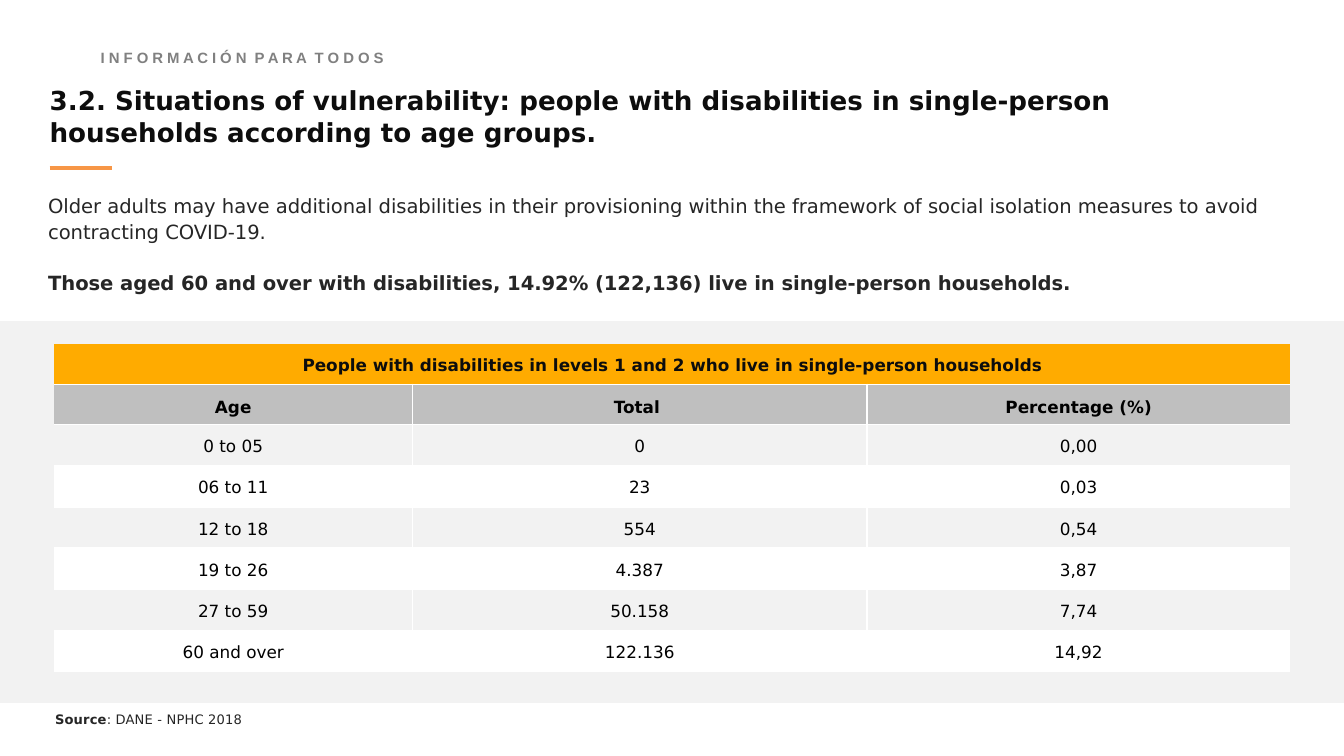
import pptx
import pptx.dml.color
import pptx.enum.shapes
import pptx.enum.text
import pptx.oxml.ns
import pptx.util
import lxml.etree
from pptx.util import Inches

THEME = {
    "font": {"body": "DejaVu Sans", "tagline": "Arial"},
    "size": {"title": 14, "body": 10.5, "table": 9, "tagline": 8, "source": 7},
    "color": {
        "title": "0D0D0D", "body": "262626", "tagline": "808080", "black": "000000",
        "white": "FFFFFF", "band": "F2F2F2", "table_title": "FFAB00",
        "table_head": "BFBFBF", "accent": "F79646",
    },
}
ALIGN = pptx.enum.text.PP_ALIGN
qn = pptx.oxml.ns.qn


def color(name):
    return pptx.dml.color.RGBColor.from_string(THEME["color"][name])


def add_text(paragraph, text, size, color_name, bold=False, face="body", spacing=0,
             indent=0, **layout):
    """Add a run to a paragraph; layout holds paragraph attributes."""
    for name, value in layout.items():
        setattr(paragraph, name, value)
    if indent:
        paragraph._p.get_or_add_pPr().set("marL", str(Inches(indent)))
    run = paragraph.add_run()
    run.text = text
    font_format = {
        "name": THEME["font"][face],
        "size": pptx.util.Pt(THEME["size"][size]),
        "bold": bold,
    }
    for name, value in font_format.items():
        setattr(run.font, name, value)
    run.font.color.rgb = color(color_name)
    if spacing:
        run.font._element.set("spc", str(round(spacing * 100)))


# Widescreen slide, 16 to 9
presentation = pptx.Presentation()
presentation.slide_width = Inches(10)
presentation.slide_height = Inches(10) * 9 // 16
slide = presentation.slides.add_slide(presentation.slide_layouts[6])

# Grey band behind the table
band = slide.shapes.add_shape(
    pptx.enum.shapes.MSO_SHAPE.RECTANGLE, 0, Inches(2.39), Inches(10), Inches(2.84))
band.shadow.inherit = False
band.fill.solid()
band.fill.fore_color.rgb = color("band")
band.line.fill.background()

# Text boxes: left, top, width, height and margins
text_boxes = {
    "tagline": (0.74, 0.3, 3.07, 0.19, (0, 0.02, 0, 0)),
    "title": (0.36, 0.63, 8.66, 0.47, (0, 0, 0, 0)),
    "body": (0.25, 1.38, 9.75, 0.88, (0.1, 0.05, 0.1, 0.05)),
    "source": (0.4, 5.28, 8.71, 0.13, (0, 0.01, 0, 0)),
}
frames = {}
for name, (left, top, width, height, margins) in text_boxes.items():
    box = slide.shapes.add_textbox(Inches(left), Inches(top), Inches(width), Inches(height))
    frames[name] = box.text_frame
    frames[name].word_wrap = True
    for side, margin in zip(("left", "top", "right", "bottom"), margins):
        setattr(frames[name], f"margin_{side}", Inches(margin))

add_text(frames["tagline"].paragraphs[0], "I N F O R M A C I Ó N  P A R A  T O D O S",
         "tagline", "tagline", bold=True, face="tagline", spacing=-0.05, indent=0.01,
         alignment=ALIGN.JUSTIFY, line_spacing=1.3)
add_text(frames["title"].paragraphs[0],
         "3.2. Situations of vulnerability: people with disabilities in single-person "
         "households according to age groups.", "title", "title", bold=True, indent=0.01)
add_text(frames["body"].paragraphs[0],
         "Older adults may have additional disabilities in their provisioning within the "
         "framework of social isolation measures to avoid contracting COVID-19.",
         "body", "body", indent=0.01, line_spacing=1.1)
add_text(frames["body"].add_paragraph(),
         "Those aged 60 and over with disabilities, 14.92% (122,136) live in "
         "single-person households.", "body", "body", bold=True, indent=0.01,
         line_spacing=1.1, space_before=pptx.util.Pt(13.5))
source = frames["source"].paragraphs[0]
add_text(source, "Source", "source", "body", bold=True, spacing=0.1, indent=0.01,
         line_spacing=1.04)
add_text(source, ": DANE - NPHC 2018", "source", "body", spacing=0.1)

# Table of people by age group
rows = [
    ("People with disabilities in levels 1 and 2 who live in single-person households", "", ""),
    ("Age", "Total ", "Percentage (%)"),
    ("0 to 05", "0", "0,00"),
    ("06 to 11", "23", "0,03"),
    ("12 to 18", "554", "0,54"),
    ("19 to 26", "4.387", "3,87"),
    ("27 to 59", "50.158", "7,74"),
    ("60 and over", "122.136", "14,92"),
]
column_widths = (2.67, 3.38, 3.15)
table_height, head_height, head_rows = 2.44, 0.3, 2
body_height = (table_height - head_rows * head_height) / (len(rows) - head_rows)
table = slide.shapes.add_table(
    len(rows), len(column_widths), Inches(0.4), Inches(2.56),
    Inches(sum(column_widths)), Inches(table_height)).table
table.first_row = False
table.horz_banding = False
for column, width in zip(table.columns, column_widths):
    column.width = Inches(width)

cell_format = {
    "margin_left": Inches(0.01), "margin_top": Inches(0.01),
    "margin_right": Inches(0.01), "margin_bottom": 0,
    "vertical_anchor": pptx.enum.text.MSO_ANCHOR.MIDDLE,
}
for row_index, values in enumerate(rows):
    is_head = row_index < head_rows
    table.rows[row_index].height = Inches(head_height if is_head else body_height)
    for column_index, value in enumerate(values):
        cell = table.cell(row_index, column_index)
        for name, setting in cell_format.items():
            setattr(cell, name, setting)

        # White rules only between cells, none around the table
        rules = {
            "lnL": row_index > 0 and column_index > 0,
            "lnR": row_index > 0 and column_index < len(values) - 1,
            "lnT": row_index > 0,
            "lnB": row_index < len(rows) - 1,
        }
        properties = cell._tc.get_or_add_tcPr()
        for tag, visible in rules.items():
            line = lxml.etree.SubElement(properties, qn(f"a:{tag}"), w=str(pptx.util.Pt(1)))
            if visible:
                fill = lxml.etree.SubElement(line, qn("a:solidFill"))
                lxml.etree.SubElement(fill, qn("a:srgbClr"), val=THEME["color"]["white"])
            else:
                lxml.etree.SubElement(line, qn("a:noFill"))

        # Title row, head row, then clear and white rows in turn
        if not is_head and row_index % 2 == 0:
            cell.fill.background()
        else:
            cell.fill.solid()
            cell.fill.fore_color.rgb = color(
                {0: "table_title", 1: "table_head"}.get(row_index, "white"))
        if value:
            add_text(cell.text_frame.paragraphs[0], value, "table",
                     "title" if row_index == 0 else "black", bold=is_head,
                     alignment=ALIGN.CENTER, line_spacing=1.3 if row_index == 1 else 1.1)
table.cell(0, 0).merge(table.cell(0, len(column_widths) - 1))

# Accent line under the title
accent = slide.shapes.add_connector(
    pptx.enum.shapes.MSO_CONNECTOR.STRAIGHT,
    Inches(0.37), Inches(1.25), Inches(0.83), Inches(1.25))
accent.line.color.rgb = color("accent")
accent.line.width = pptx.util.Pt(2)
lxml.etree.SubElement(accent._element.spPr, qn("a:effectLst"))

presentation.save("out.pptx")
